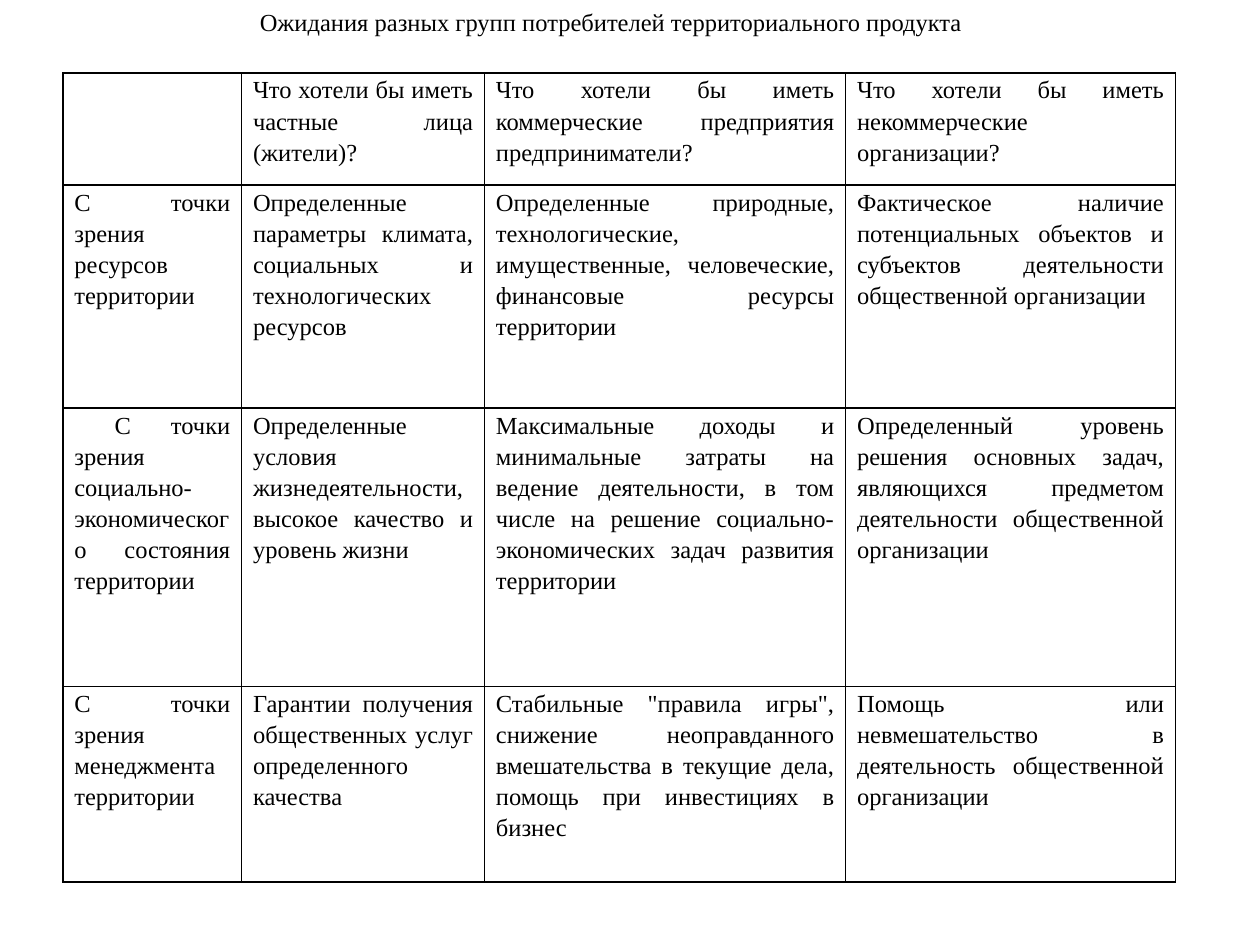
from dataclasses import dataclass

from lxml.etree import SubElement
from pptx import Presentation
from pptx.dml.color import RGBColor
from pptx.enum.text import MSO_ANCHOR, PP_ALIGN
from pptx.oxml.ns import qn
from pptx.util import Inches, Pt


@dataclass(frozen=True)
class Theme:
    font: str = "Times New Roman"
    size: int = 14
    ink: str = "000000"
    border: int = 1
    line_spacing: float = 1.15


THEME = Theme()
TITLE = "Ожидания разных групп потребителей территориального продукта"
COLUMN_WIDTHS = (1.42, 1.93, 2.87, 2.62)
ROW_HEIGHTS = (0.89, 1.77, 2.21, 1.55)
EXPECTATIONS = (
    (
        "",
        "Что хотели бы иметь частные лица (жители)?",
        "Что хотели бы иметь коммерческие предприятия предприниматели?",
        "Что хотели бы иметь некоммерческие организации?",
    ),
    (
        "С точки зрения ресурсов территории",
        "Определенные параметры климата, социальных и технологических ресурсов",
        "Определенные природные, технологические, имущественные, человеческие, "
        "финансовые ресурсы территории",
        "Фактическое наличие потенциальных объектов и субъектов деятельности "
        "общественной организации",
    ),
    (
        "С точки зрения социально-экономического состояния территории",
        "Определенные условия жизнедеятельности, высокое качество и уровень жизни",
        "Максимальные доходы и минимальные затраты на ведение деятельности, "
        "в том числе на решение социально-экономических задач развития территории",
        "Определенный уровень решения основных задач, являющихся предметом "
        "деятельности общественной организации",
    ),
    (
        "С точки зрения менеджмента территории",
        "Гарантии получения общественных услуг определенного качества",
        'Стабильные "правила игры", снижение неоправданного вмешательства '
        "в текущие дела, помощь при инвестициях в бизнес",
        "Помощь или невмешательство в деятельность общественной организации",
    ),
)
INDENTED_CELL = (2, 0)


def write_text(frame, text, align, side_margin=0, first_indent=0, line_spacing=None):
    paragraph = frame.paragraphs[0]
    paragraph.alignment = align
    if line_spacing:
        paragraph.line_spacing = line_spacing
    properties = paragraph._p.get_or_add_pPr()
    properties.set("marL", str(Inches(side_margin)))
    properties.set("marR", str(Inches(side_margin)))
    properties.set("indent", str(Inches(first_indent)))
    font = paragraph.font
    if text:
        run = paragraph.add_run()
        run.text = text
        font = run.font
    font.name = THEME.font
    font.size = Pt(THEME.size)
    font.color.rgb = RGBColor.from_string(THEME.ink)


def draw_borders(cell):
    properties = cell._tc.get_or_add_tcPr()
    for position, side in enumerate(("a:lnL", "a:lnR", "a:lnT", "a:lnB")):
        line = SubElement(properties, qn(side), w=str(Pt(THEME.border)))
        properties.insert(position, line)
        fill = SubElement(line, qn("a:solidFill"))
        SubElement(fill, qn("a:srgbClr"), val=THEME.ink)


def add_title(slide, left, top, width, height):
    title = slide.shapes.add_textbox(left, top, width, height)
    frame = title.text_frame
    frame.word_wrap = False
    frame.vertical_anchor = MSO_ANCHOR.MIDDLE
    write_text(frame, TITLE, PP_ALIGN.CENTER, first_indent=0.49)


def add_expectations(slide, left, top, width, height):
    """Place the table, sharing the box out by the listed widths and heights."""
    table = slide.shapes.add_table(
        len(ROW_HEIGHTS), len(COLUMN_WIDTHS), left, top, width, height
    ).table
    table.first_row = table.horz_banding = False
    for column, share in zip(table.columns, COLUMN_WIDTHS):
        column.width = int(width * share / sum(COLUMN_WIDTHS))
    for row, share in zip(table.rows, ROW_HEIGHTS):
        row.height = int(height * share / sum(ROW_HEIGHTS))
    for r, texts in enumerate(EXPECTATIONS):
        for c, text in enumerate(texts):
            cell = table.cell(r, c)
            cell.margin_left = cell.margin_right = Inches(0.05)
            cell.margin_top = cell.margin_bottom = 0
            cell.fill.background()
            draw_borders(cell)
            write_text(
                cell.text_frame, text, PP_ALIGN.JUSTIFY, side_margin=0.04,
                first_indent=0.32 if (r, c) == INDENTED_CELL else 0,
                line_spacing=THEME.line_spacing,
            )


def main():
    presentation = Presentation()
    presentation.slide_width, presentation.slide_height = Inches(10), Inches(7.5)
    slide = presentation.slides.add_slide(presentation.slide_layouts[6])
    add_expectations(slide, Inches(0.5), Inches(0.58), Inches(8.83), Inches(6.42))
    add_title(slide, Inches(1.42), Inches(0), Inches(6.37), Inches(0.34))
    presentation.save("out.pptx")


if __name__ == "__main__":
    main()
